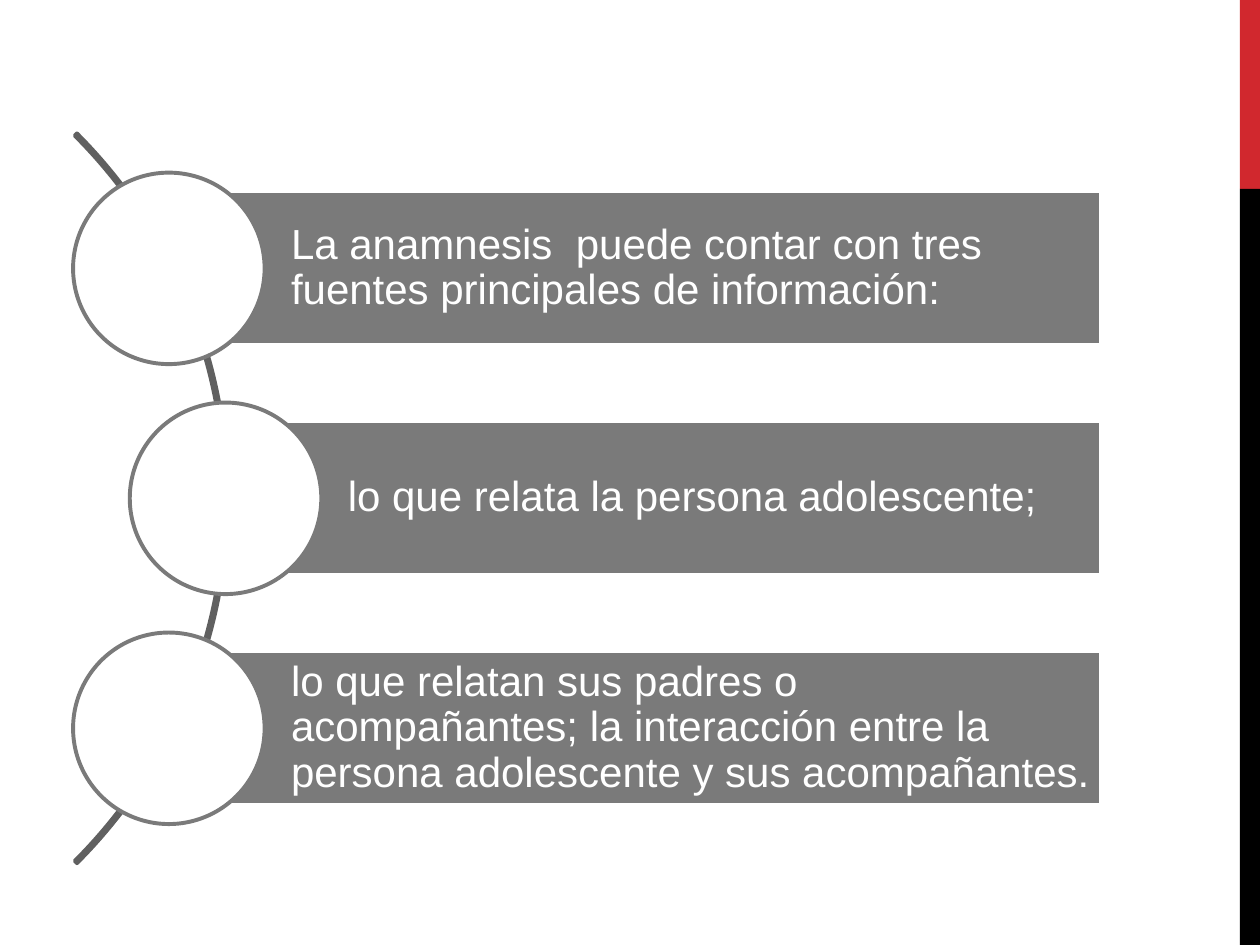
"""Build a slide listing the three sources of information of an anamnesis."""
from pptx import Presentation
from pptx.dml.color import RGBColor
from pptx.enum.shapes import MSO_SHAPE as SHAPE
from pptx.enum.text import MSO_ANCHOR as ANCHOR, PP_ALIGN as ALIGN
from pptx.util import Inches, Pt

RED = RGBColor(0xD1, 0x28, 0x2E)
BLACK = RGBColor(0x00, 0x00, 0x00)
WHITE = RGBColor(0xFF, 0xFF, 0xFF)
GRAY = RGBColor(0x7A, 0x7A, 0x7A)
DARK_GRAY = RGBColor(0x60, 0x60, 0x60)

BAR_RIGHT, BAR_HEIGHT = 8.74, 1.22
CIRCLE = 1.52
FIRST_CENTER, STEP = 2.13, 1.825

ITEMS = [
    (1.34, "La anamnesis  puede contar con tres fuentes principales de información:"),
    (1.79, "lo que relata la persona adolescente;"),
    (1.34, "lo que relatan sus padres o acompañantes; la interacción entre la "
           "persona adolescente y sus acompañantes."),
]

prs = Presentation()
prs.slide_width, prs.slide_height = Inches(10), Inches(7.5)
s = prs.slides.add_slide(prs.slide_layouts[6])


def add_shape(kind, x, y, w, h, fill=None, line=None):
    sp = s.shapes.add_shape(kind, Inches(x), Inches(y), Inches(w), Inches(h))
    sp.shadow.inherit = False
    if fill is None:
        sp.fill.background()
    else:
        sp.fill.solid()
        sp.fill.fore_color.rgb = fill
    if line is None:
        sp.line.fill.background()
    else:
        sp.line.color.rgb = line
        sp.line.width = Pt(2.25)
    return sp


add_shape(SHAPE.RECTANGLE, 9.84, 0, 0.16, 1.5, RED)
add_shape(SHAPE.RECTANGLE, 9.84, 1.5, 0.16, 6, BLACK)

arc = add_shape(SHAPE.BLOCK_ARC, -6.38, -0.14, 8.19, 8.19, line=DARK_GRAY)
for i, value in enumerate((189, 27, 0.003)):
    arc.adjustments[i] = value

for i, (left, text) in enumerate(ITEMS):
    center = FIRST_CENTER + i * STEP
    bar = add_shape(SHAPE.RECTANGLE, left, center - BAR_HEIGHT / 2,
                    BAR_RIGHT - left, BAR_HEIGHT, GRAY, WHITE)
    tf = bar.text_frame
    tf.text = text
    tf.word_wrap = True
    tf.vertical_anchor = ANCHOR.MIDDLE
    tf.margin_left = Inches(0.97)
    tf.margin_top = tf.margin_right = tf.margin_bottom = Inches(0.07)
    p = tf.paragraphs[0]
    p.alignment = ALIGN.LEFT
    p.line_spacing = 0.9
    r = p.runs[0]
    r.font.name = "Arial"
    r.font.size = Pt(24)
    r.font.color.rgb = WHITE
    add_shape(SHAPE.OVAL, left - CIRCLE / 2, center - CIRCLE / 2,
              CIRCLE, CIRCLE, WHITE, GRAY)

prs.save("out.pptx")
